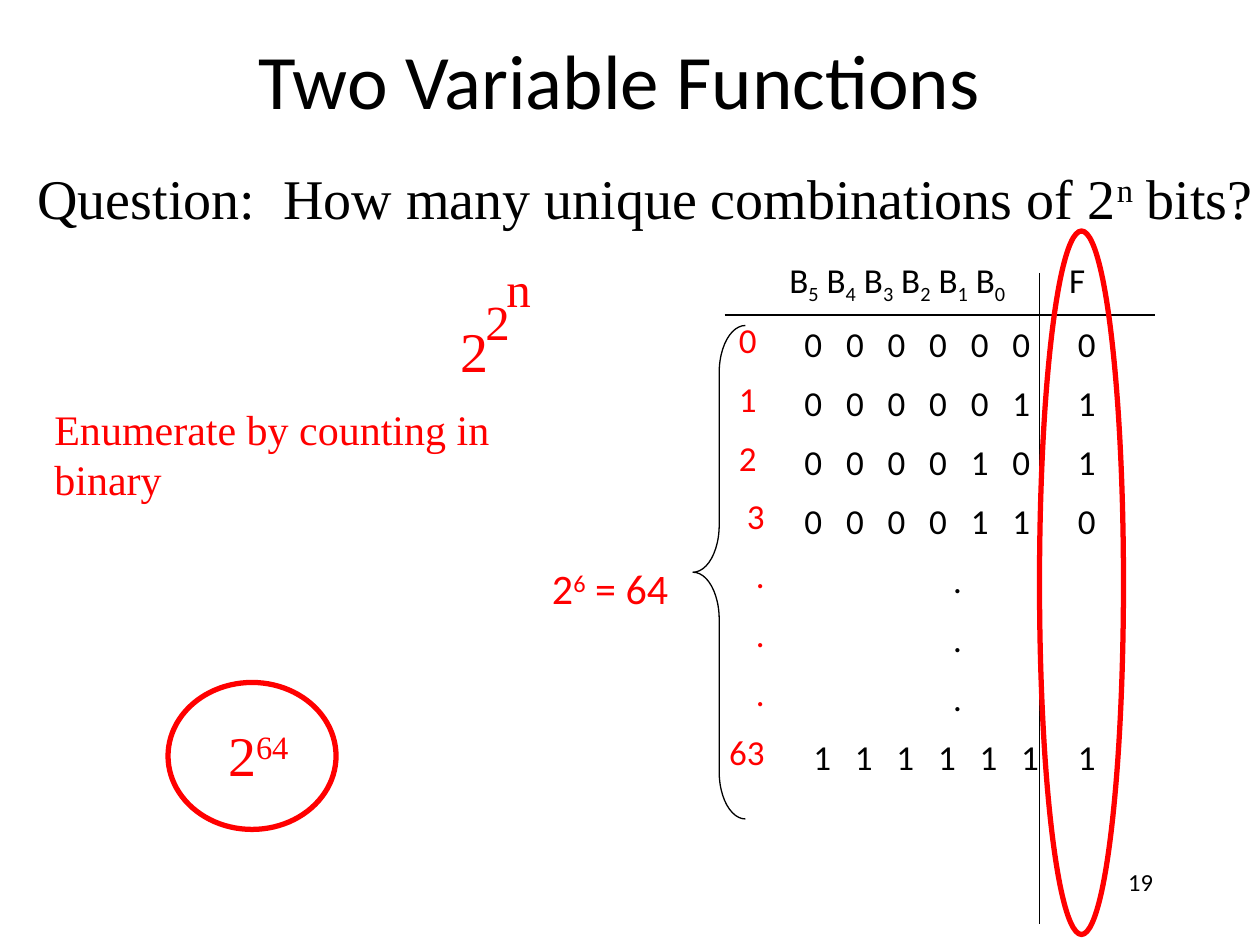
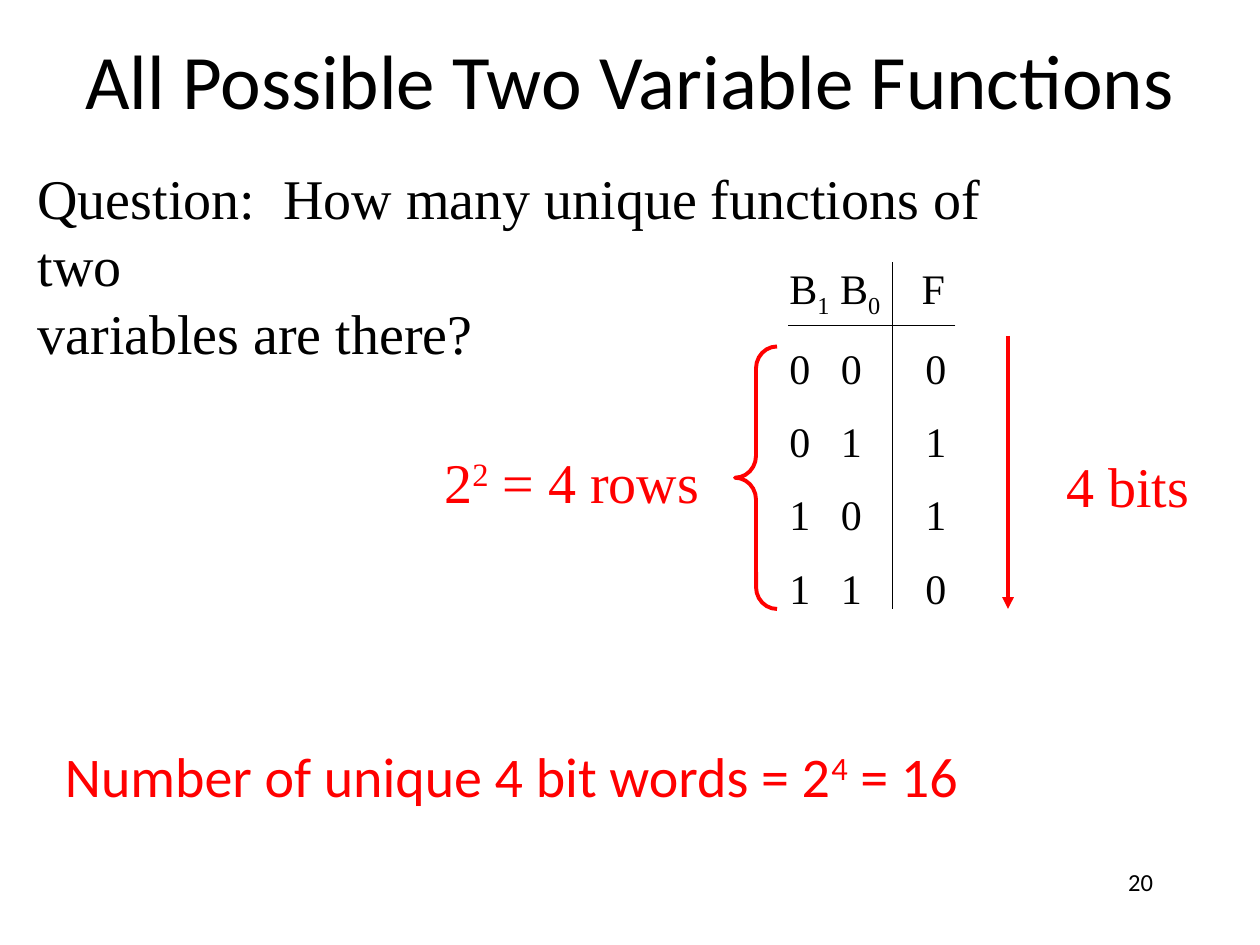
"""Build two slides on counting Boolean functions, laid out on a 120 by 90 grid."""
from lxml import etree
from pptx import Presentation
from pptx.dml.color import RGBColor
from pptx.enum.shapes import MSO_CONNECTOR, MSO_SHAPE
from pptx.enum.text import MSO_ANCHOR, PP_ALIGN
from pptx.oxml.ns import qn
from pptx.util import Inches, Pt

LEFT, CENTER, RIGHT = PP_ALIGN.LEFT, PP_ALIGN.CENTER, PP_ALIGN.RIGHT
TOP, MIDDLE, BOTTOM = MSO_ANCHOR.TOP, MSO_ANCHOR.MIDDLE, MSO_ANCHOR.BOTTOM
ELLIPSE, BRACE = MSO_SHAPE.OVAL, MSO_SHAPE.LEFT_BRACE
STRAIGHT = MSO_CONNECTOR.STRAIGHT

COLORS = {"ink": "000000", "accent": "FF0000"}
SANS, SERIF = "Calibri", "Times New Roman"
SUPERSCRIPT, SUBSCRIPT = 30000, -25000
WIDTH, HEIGHT = Inches(10), Inches(7.5)
COLUMNS, ROWS = 120, 90


def grid(*lengths):
    """Turn alternating column and row counts into slide lengths."""
    cells = (WIDTH / COLUMNS, HEIGHT / ROWS)
    return [int(length * cells[i % 2]) for i, length in enumerate(lengths)]


def color(name):
    """Look up a named colour."""
    return RGBColor.from_string(COLORS[name])


def set_tabs(paragraph, stops):
    """Give a paragraph left tab stops, in inches."""
    tabs = etree.SubElement(paragraph._p.get_or_add_pPr(), qn("a:tabLst"))
    for stop in stops:
        etree.SubElement(tabs, qn("a:tab"), pos=str(Inches(stop)), algn="l")


def add_runs(paragraph, text, shift):
    """Add text in which every second piece between bars is raised or lowered."""
    for i, piece in enumerate(text.split("|")):
        if piece:
            run = paragraph.add_run()
            run.text = piece
            if i % 2:
                run._r.get_or_add_rPr().set("baseline", str(shift))


def add_text(slide, box, lines, size, font=SERIF, ink="accent", align=LEFT,
             anchor=TOP, wrap=False, shift=SUPERSCRIPT, gap=0):
    """Add a text box; each line is a string or a pair of string and tab stops."""
    frame = slide.shapes.add_textbox(*grid(*box)).text_frame
    frame.word_wrap = wrap
    frame.vertical_anchor = anchor
    for i, line in enumerate(lines):
        text, stops = (line, []) if isinstance(line, str) else line
        paragraph = frame.add_paragraph() if i else frame.paragraphs[0]
        paragraph.alignment = align
        paragraph.space_before = Pt(gap)
        if stops:
            set_tabs(paragraph, stops)
        paragraph.font.name = font
        paragraph.font.size = Pt(size)
        paragraph.font.color.rgb = color(ink)
        add_runs(paragraph, text, shift)


def add_outline(slide, kind, box, ink="accent", weight=3, curve=None):
    """Add an unfilled preset shape."""
    shape = slide.shapes.add_shape(kind, *grid(*box))
    shape.shadow.inherit = False
    shape.fill.background()
    shape.line.color.rgb = color(ink)
    shape.line.width = Pt(weight)
    if curve is not None:
        shape.adjustments[0] = curve


def add_line(slide, ends, ink="ink", weight=0.75, arrow=False):
    """Add a straight line, with an arrowhead at its end if asked."""
    connector = slide.shapes.add_connector(STRAIGHT, *grid(*ends))
    connector.line.color.rgb = color(ink)
    connector.line.width = Pt(weight)
    if arrow:
        etree.SubElement(connector.line._get_or_add_ln(), qn("a:tailEnd"), type="triangle")
    etree.SubElement(connector._element.spPr, qn("a:effectLst"))


def add_slide(presentation, title, title_box, number):
    """Add a blank slide with its title and page number."""
    slide = presentation.slides.add_slide(presentation.slide_layouts[6])
    add_text(slide, title_box, [title], 44, SANS, "ink", CENTER, MIDDLE, wrap=True)
    add_text(slide, (86, 82, 25, 6), [str(number)], 14, SANS, "ink", RIGHT, wrap=True)
    return slide


def bit_row(bits, start, pitch, output_stop):
    """Set input bits at equal tab stops and the last bit under F."""
    stops = [start + pitch * i for i in range(len(bits) - 1)] + [output_stop]
    return "".join("\t" + bit for bit in bits), stops


def six_input_table(slide):
    """Draw the truth table of six inputs with its row numbers."""
    header = " ".join(f"B|{i}|" for i in range(5, -1, -1)) + "\tF"
    rows = [bit_row(bits, 0.12, 0.33, 2.29)
            for bits in ("0000000", "0000011", "0000101", "0000110")]
    dots = [("\t.", [1.3])] * 3
    last = bit_row("1111111", 0.19, 0.33, 2.29)
    add_text(slide, (74, 24, 42, 60), [(header, [2.22]), *rows, *dots, last],
             20, SANS, "ink", wrap=True, shift=SUBSCRIPT, gap=9.7)
    add_line(slide, (69, 30, 110, 30))
    add_line(slide, (99, 26, 99, 88))
    add_outline(slide, BRACE, (66, 31, 5, 47), "ink", 0.75, 0.9)
    add_text(slide, (66, 29.7, 8, 48), ["0 ", "1 ", "2 ", "3", ".", ".", ".", "63"],
             20, SANS, align=RIGHT, wrap=True, gap=9.7)
    add_text(slide, (51, 53, 14.2, 6.1), ["2|6| = 64"], 24, SANS, align=CENTER)
    add_outline(slide, ELLIPSE, (99, 22, 8, 67))


def two_input_table(slide):
    """Draw the truth table of two inputs with its row and bit counts."""
    rows = [(f"{a}\t{b}\t{a ^ b}", [0.41, 1.08]) for a in (0, 1) for b in (0, 1)]
    add_text(slide, (74, 24.4, 42, 35), [("B|1| B|0|\tF", [1.05]), *rows],
             24, ink="ink", wrap=True, shift=SUBSCRIPT, gap=13)
    add_line(slide, (85, 25, 85, 58))
    add_line(slide, (91, 31, 75, 31))
    add_outline(slide, BRACE, (70, 33, 4, 25), weight=2.25, curve=0.52)
    add_text(slide, (41, 42, 26.9, 7.6), ["2|2| = 4 rows"], 32, align=CENTER)
    add_line(slide, (96, 32, 96, 58), "accent", 2.25, arrow=True)
    add_text(slide, (100.3, 42.4, 14.2, 7.6), ["4 bits"], 32, align=CENTER)


def main():
    """Build both slides and save them."""
    presentation = Presentation()
    presentation.slide_width, presentation.slide_height = WIDTH, HEIGHT

    slide = add_slide(presentation, "Two Variable Functions", (8, 0, 102, 15), 19)
    add_text(slide, (2.4, 15, 118.3, 7.6),
             ["Question:  How many unique combinations of 2|n| bits?"], 32, ink="ink")
    add_text(slide, (4, 42, 55, 6.6), ["Enumerate by counting in binary"], 24, anchor=BOTTOM)
    tower = (("2", 32, (42.7, 29.6, 5, 7.6)),
             ("2", 28, (45, 27.2, 4.8, 6.8)),
             ("n", 28, (47, 24, 4.8, 6.8)))
    for text, size, box in tower:
        add_text(slide, box, [text], size, align=CENTER)
    add_text(slide, (20.3, 68, 8.6, 7.6), ["2|64|"], 32, align=CENTER)
    add_outline(slide, ELLIPSE, (16, 65, 16, 14))
    six_input_table(slide)

    slide = add_slide(presentation, "All Possible Two Variable Functions", (4, 0, 112, 15), 20)
    add_text(slide, (2.4, 15, 101.5, 14),
             ["Question:  How many unique functions of two", "variables are there?"],
             32, ink="ink", wrap=True)
    two_input_table(slide)
    add_text(slide, (5, 70, 88, 7.6), ["Number of unique 4 bit words = 2|4| = 16"], 32, SANS)

    presentation.save("out.pptx")


if __name__ == "__main__":
    main()
